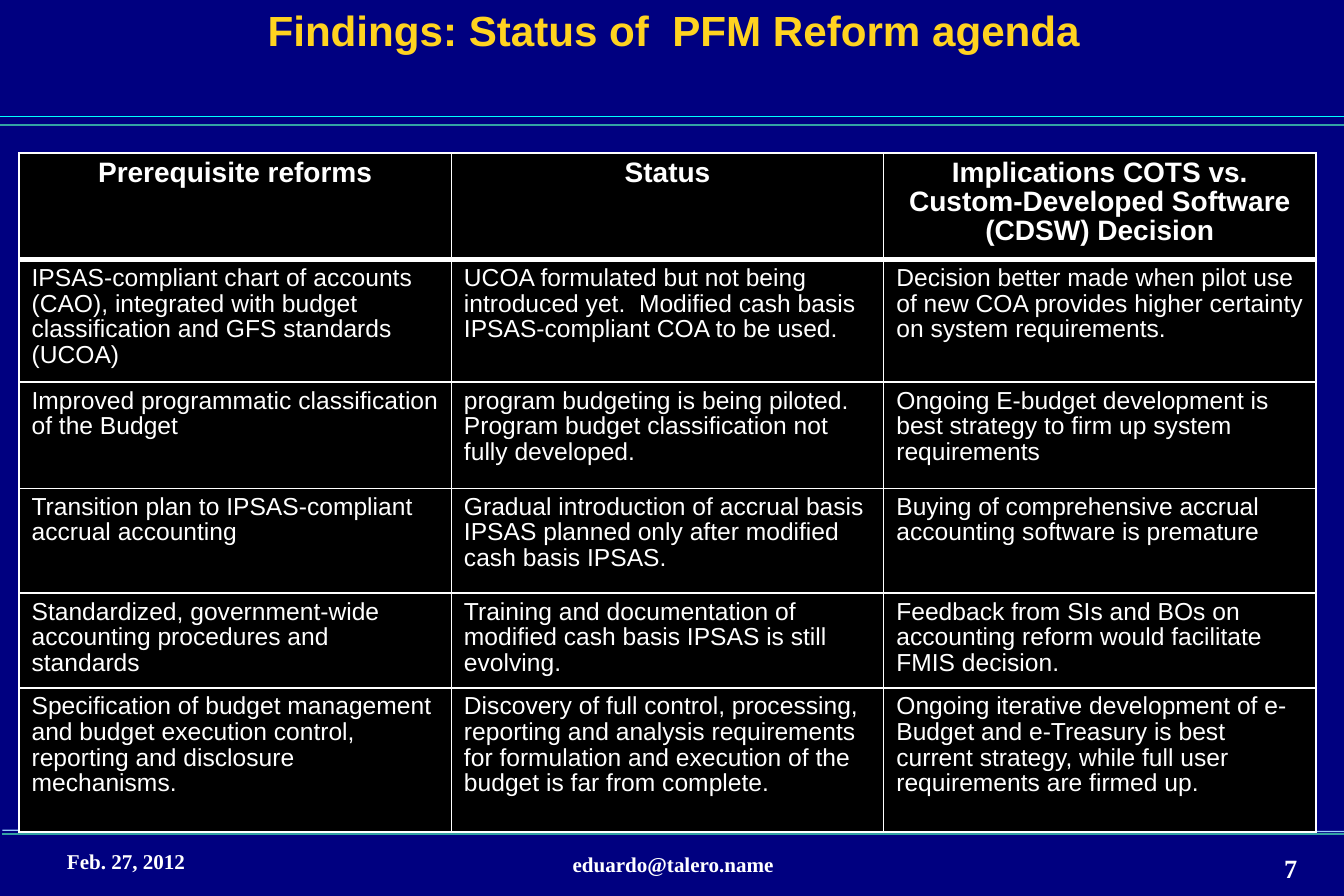
"""Builds the slide on the status of the PFM reform agenda."""
from lxml.etree import SubElement
from pptx import Presentation
from pptx.dml.color import RGBColor
from pptx.enum.shapes import MSO_CONNECTOR
from pptx.enum.text import MSO_ANCHOR, PP_ALIGN
from pptx.oxml import parse_xml
from pptx.oxml.ns import nsdecls, qn
from pptx.util import Inches, Pt

COLORS = {"navy": "000080", "gold": "FFD320", "white": "FFFFFF", "black": "000000",
          "cyan": "00FFFF", "teal": "33A3A3", "sky": "99CCFF"}
SANS, SERIF = "Arial", "Times New Roman"
SLIDE_WIDTH, SLIDE_HEIGHT = 10.63, 7.09

TITLE = "Findings: Status of  PFM Reform agenda"
HEADINGS = ("Prerequisite reforms", "Status",
            "Implications COTS vs. Custom-Developed Software (CDSW) Decision")
REFORMS = [
    ("IPSAS-compliant chart of accounts (CAO), integrated with budget classification and GFS standards (UCOA)",
     "UCOA formulated but not being introduced yet.  Modified cash basis IPSAS-compliant COA to be used.",
     "Decision better made when pilot use of new COA provides higher certainty on system requirements."),
    ("Improved programmatic classification of the Budget",
     "program budgeting is being piloted. Program budget classification not fully developed.",
     "Ongoing E-budget development is best strategy to firm up system requirements"),
    ("Transition plan to IPSAS-compliant accrual accounting",
     "Gradual introduction of accrual basis IPSAS planned only after modified cash basis IPSAS.",
     "Buying of comprehensive accrual accounting software is premature"),
    ("Standardized, government-wide accounting procedures and standards",
     "Training and documentation of modified cash basis IPSAS is still evolving.",
     "Feedback from SIs and BOs on accounting reform would facilitate FMIS decision."),
    ("Specification of budget management and budget execution control, reporting and disclosure mechanisms.",
     "Discovery of full control, processing, reporting and analysis requirements for formulation and "
     "execution of the budget is far from complete.",
     "Ongoing iterative development of e-Budget and e-Treasury is best current strategy, while full user "
     "requirements are firmed up."),
]
ROW_HEIGHTS = (0.84, 0.97, 0.84, 0.83, 0.75, 1.14)
COLUMN_WIDTH = 3.42
TABLE_LEFT, TABLE_TOP = 0.15, 1.21
RULES = [(0, 0.92, 0.92, "cyan"), (0, 0.99, 0.99, "teal"),
         (0.02, 6.57, 6.58, "sky"), (0.02, 6.6, 6.6, "teal")]
FOOTERS = [("Feb. 27, 2012", (0.53, 6.73, 2.47, 0.29), 12, PP_ALIGN.LEFT),
           ("eduardo@talero.name", (3.64, 6.75, 3.37, 0.29), 12, PP_ALIGN.CENTER),
           ("7", (9.25, 6.76, 1.01, 0.24), 15, PP_ALIGN.RIGHT)]


def write(frame, text, size=14, font=SANS, color="white", bold=False,
          align=PP_ALIGN.LEFT, spacing=0.93):
    frame.word_wrap = True
    paragraph = frame.paragraphs[0]
    paragraph.alignment, paragraph.line_spacing = align, spacing
    run = paragraph.add_run()
    run.text = text
    run.font.size, run.font.name, run.font.bold = Pt(size), font, bold
    run.font.color.rgb = RGBColor.from_string(COLORS[color])


def add_label(slide, box, text, inset_top=0, **style):
    frame = slide.shapes.add_textbox(*map(Inches, box)).text_frame
    frame.margin_left = frame.margin_right = frame.margin_bottom = 0
    frame.margin_top = Inches(inset_top)
    frame.vertical_anchor = MSO_ANCHOR.TOP
    write(frame, text, **style)


def add_rule(slide, left, start, end, color):
    rule = slide.shapes.add_connector(MSO_CONNECTOR.STRAIGHT, Inches(left), Inches(start),
                                      Inches(left + SLIDE_WIDTH), Inches(end))
    rule.line.color.rgb = RGBColor.from_string(COLORS[color])
    rule.line.width = Pt(0.75)
    SubElement(rule._element.spPr, qn("a:effectLst"))


def set_borders(cell, **widths):
    properties = cell._tc.get_or_add_tcPr()
    for index, (side, width) in enumerate(widths.items()):
        properties.insert(index, parse_xml(
            f'<a:ln{side} {nsdecls("a")} w="{Pt(width)}"><a:solidFill>'
            f'<a:srgbClr val="{COLORS["white"]}"/></a:solidFill></a:ln{side}>'))


def add_reform_table(slide):
    rows = [HEADINGS, *REFORMS]
    table = slide.shapes.add_table(
        len(rows), len(HEADINGS), Inches(TABLE_LEFT), Inches(TABLE_TOP),
        Inches(COLUMN_WIDTH * len(HEADINGS)), Inches(sum(ROW_HEIGHTS))).table
    for column in table.columns:
        column.width = Inches(COLUMN_WIDTH)
    for r, (height, texts) in enumerate(zip(ROW_HEIGHTS, rows)):
        table.rows[r].height = Inches(height)
        heading = r == 0
        for c, text in enumerate(texts):
            cell = table.cell(r, c)
            cell.fill.solid()
            cell.fill.fore_color.rgb = RGBColor.from_string(COLORS["black"])
            set_borders(cell, L=1, R=1, T=3 if r == 1 else 1, B=3 if heading else 1)
            write(cell.text_frame, text, size=16 if heading else 14, bold=heading,
                  align=PP_ALIGN.CENTER if heading else PP_ALIGN.LEFT)


def main():
    deck = Presentation()
    deck.slide_width, deck.slide_height = Inches(SLIDE_WIDTH), Inches(SLIDE_HEIGHT)
    slide = deck.slides.add_slide(deck.slide_layouts[6])
    slide.background.fill.solid()
    slide.background.fill.fore_color.rgb = RGBColor.from_string(COLORS["navy"])
    for rule in RULES:
        add_rule(slide, *rule)
    add_label(slide, (0, 0, 10.66, 0.91), TITLE, inset_top=0.07, size=24, color="gold",
              bold=True, align=PP_ALIGN.CENTER)
    add_reform_table(slide)
    for text, box, size, align in FOOTERS:
        add_label(slide, box, text, size=size, font=SERIF, bold=True, align=align, spacing=0.95)
    deck.save("out.pptx")


if __name__ == "__main__":
    main()
